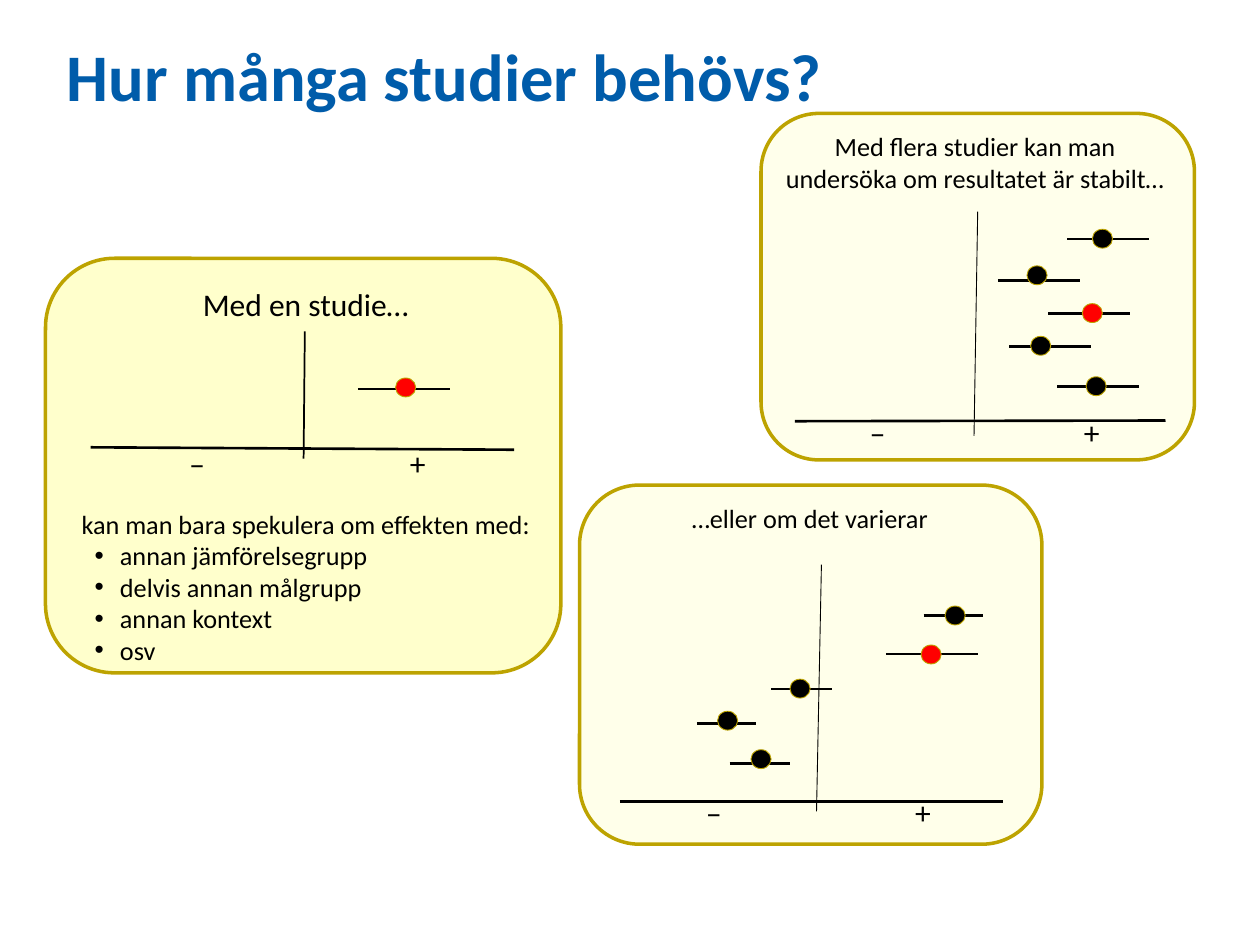
from lxml import etree
from pptx import Presentation
from pptx.dml.color import RGBColor
from pptx.enum.shapes import MSO_CONNECTOR, MSO_SHAPE
from pptx.enum.text import MSO_ANCHOR, PP_ALIGN
from pptx.oxml.ns import qn
from pptx.util import Pt

STRAIGHT = MSO_CONNECTOR.STRAIGHT
ROUNDED, OVAL = MSO_SHAPE.ROUNDED_RECTANGLE, MSO_SHAPE.OVAL
TOP, MIDDLE = MSO_ANCHOR.TOP, MSO_ANCHOR.MIDDLE
LEFT, CENTER = PP_ALIGN.LEFT, PP_ALIGN.CENTER

BLUE = RGBColor(0x00, 0x5C, 0xAA)
CREAM = RGBColor(0xFF, 0xFF, 0xCC)
GOLD = RGBColor(0xBD, 0xA3, 0x00)
RED = RGBColor(0xFF, 0x00, 0x00)
BLACK = RGBColor(0x00, 0x00, 0x00)

DOT_W, DOT_H = 11.5, 10.8
LABEL_W, LABEL_H = 36.7, 13

PANELS = [
    dict(box=(26, 147.6, 294.5, 236.9), opacity=100, insets=(3, 3.6, 0, 3),
         paragraphs=[("Med en studie…", dict(size=18)),
                     ("kan man bara spekulera om effekten med:", dict(before=106)),
                     ("annan jämförelsegrupp", dict(bullet=True)),
                     ("delvis annan målgrupp", dict(bullet=True)),
                     ("annan kontext", dict(bullet=True)),
                     ("osv", dict(bullet=True))],
         axis=(51.8, 255.6, 293.8, 257), zero=(174.2, 189.4, 173.5, 262.1),
         zero_width=1, label_y=257.8, minus_x=94.3, plus_x=220.3,
         studies=[(204.5, 257, 222.2, 231.8, 221.4, RED)]),
    dict(box=(434.9, 64.8, 247.7, 198), opacity=38, insets=(3, 0, 6, 3),
         paragraphs=[("Med flera studier kan man undersöka om resultatet är stabilt…", {})],
         axis=(454.3, 240.7, 666, 240.3), zero=(558.7, 121, 556.6, 249.1),
         zero_width=0.5, label_y=240.2, minus_x=483.1, plus_x=605.5,
         studies=[(609.8, 656.6, 136.6, 630, 136.4, BLACK),
                  (570.2, 617, 160.3, 592.6, 157.3, BLACK),
                  (599, 645.8, 179.2, 624.2, 178.9, RED),
                  (576.7, 623.5, 198, 594.7, 197.6, BLACK),
                  (604.1, 650.9, 221, 626.4, 220.7, BLACK)]),
    dict(box=(331.2, 277.2, 264.2, 205.2), opacity=40, insets=(6, 0, 7, 3),
         paragraphs=[("…eller om det varierar", {})],
         axis=(354.2, 457.9, 573.1, 457.9), zero=(469.4, 322.6, 466.6, 463.7),
         zero_width=0.5, label_y=457.2, minus_x=389.5, plus_x=509,
         studies=[(527.8, 561.6, 351.6, 545.8, 351.7, BLACK),
                  (506.2, 558.7, 373.7, 532.1, 374, RED),
                  (440.6, 475.2, 393.8, 457.2, 393.5, BLACK),
                  (398.2, 432, 413.3, 415.8, 411.8, BLACK),
                  (416.9, 451.4, 436.3, 434.9, 433.8, BLACK)]),
]


def write(p, text, size=15, color=BLACK, bold=False, align=CENTER, before=0, bullet=False):
    p.alignment = LEFT if bullet else align
    p.space_before = Pt(before)
    if bullet:
        pPr = p._p.get_or_add_pPr()
        pPr.set("marL", str(Pt(28)))
        pPr.set("indent", str(-Pt(14.4)))
        etree.SubElement(pPr, qn("a:buFont")).set("typeface", "Arial")
        etree.SubElement(pPr, qn("a:buChar")).set("char", "•")
    r = p.add_run()
    r.text = text
    r.font.name = "Calibri"
    r.font.size = Pt(size)
    r.font.bold = bold
    r.font.color.rgb = color


def add_line(x1, y1, x2, y2, width=1.5):
    line = s.shapes.add_connector(STRAIGHT, Pt(x1), Pt(y1), Pt(x2), Pt(y2))
    line.line.color.rgb = BLACK
    line.line.width = Pt(width)
    etree.SubElement(line._element.spPr, qn("a:effectLst"))


prs = Presentation()
prs.slide_width, prs.slide_height = Pt(720), Pt(540)
s = prs.slides.add_slide(prs.slide_layouts[5])

title = s.shapes.title
title.left, title.top, title.width, title.height = Pt(31), Pt(15.1), Pt(447), Pt(55.4)
title.text_frame.vertical_anchor = MIDDLE
write(title.text_frame.paragraphs[0], "Hur många studier behövs?",
      size=38, color=BLUE, bold=True, align=LEFT)

for panel in PANELS:
    box = s.shapes.add_shape(ROUNDED, *map(Pt, panel["box"]))
    box.shadow.inherit = False
    box.fill.solid()
    box.fill.fore_color.rgb = CREAM
    if panel["opacity"] < 100:
        color = box._element.spPr.find(qn("a:solidFill"))[0]
        etree.SubElement(color, qn("a:alpha")).set("val", str(panel["opacity"] * 1000))
    box.line.color.rgb = GOLD
    box.line.width = Pt(2)
    tf = box.text_frame
    tf.word_wrap = True
    tf.vertical_anchor = TOP
    tf.margin_left, tf.margin_top, tf.margin_right, tf.margin_bottom = map(Pt, panel["insets"])
    for i, (text, style) in enumerate(panel["paragraphs"]):
        write(tf.add_paragraph() if i else tf.paragraphs[0], text, **style)

    add_line(*panel["axis"])
    add_line(*panel["zero"], width=panel["zero_width"])

    for sign, x in (("‒", panel["minus_x"]), ("+", panel["plus_x"])):
        label = s.shapes.add_textbox(Pt(x), Pt(panel["label_y"]), Pt(LABEL_W), Pt(LABEL_H))
        tf = label.text_frame
        tf.word_wrap = True
        tf.vertical_anchor = MIDDLE
        tf.margin_top = tf.margin_bottom = 0
        write(tf.paragraphs[0], sign, size=18)

    for x1, x2, y, dot_x, dot_y, color in panel["studies"]:
        add_line(x1, y, x2, y)
        dot = s.shapes.add_shape(OVAL, Pt(dot_x - DOT_W / 2), Pt(dot_y - DOT_H / 2),
                                 Pt(DOT_W), Pt(DOT_H))
        dot.shadow.inherit = False
        dot.fill.solid()
        dot.fill.fore_color.rgb = color
        dot.line.color.rgb = GOLD
        dot.line.width = Pt(0.5)

prs.save("out.pptx")
